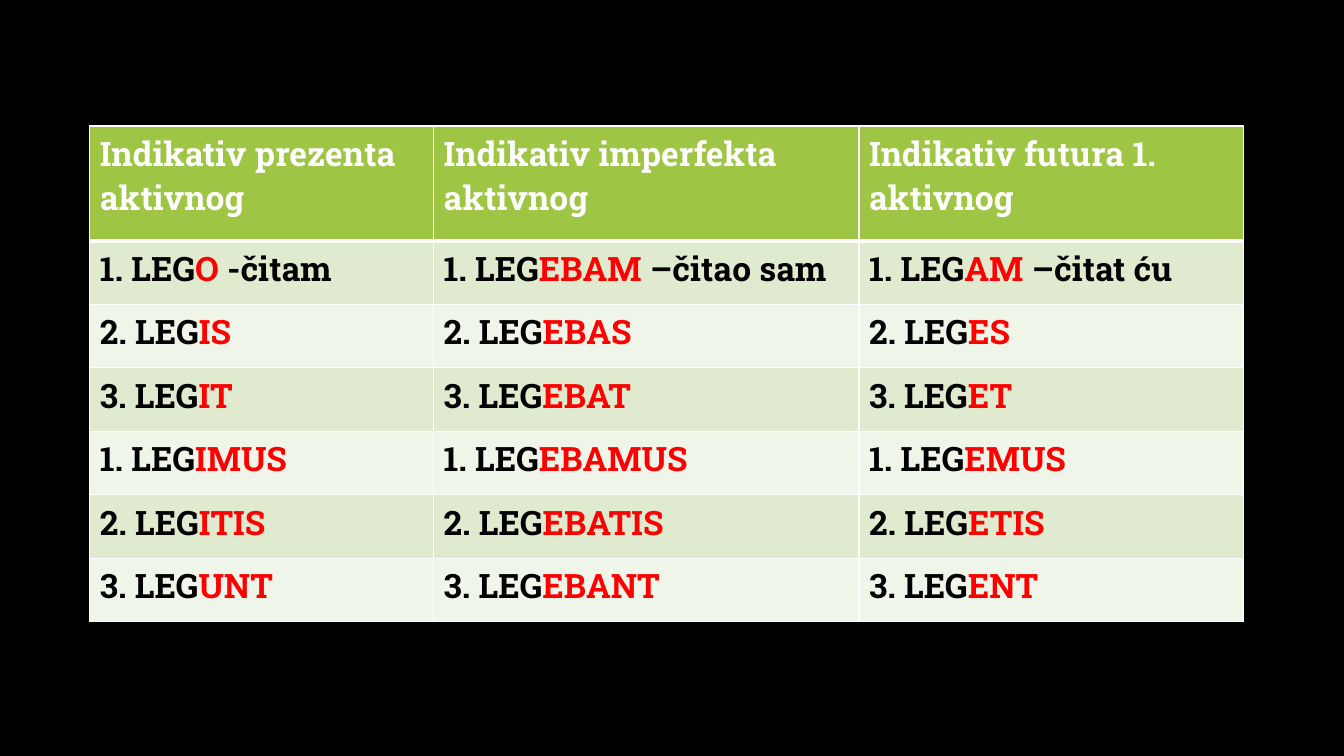
from lxml import etree
from pptx import Presentation
from pptx.dml.color import RGBColor
from pptx.oxml.ns import qn
from pptx.util import Inches, Pt

FONT = "Roboto Slab"
BLACK, WHITE, RED = "000000", "FFFFFF", "FF0000"
GREEN = "9EC544"
BANDS = ["DFEACF", "F0F5E9"]
WIDTHS = [3.41, 4.22, 3.81]
HEAD_H, ROW_H = 1.14, 0.63

# Each tense: heading, meaning of the first form, endings
TENSES = [
    ("Indikativ prezenta aktivnog", "-čitam",
     ["O", "IS", "IT", "IMUS", "ITIS", "UNT"]),
    ("Indikativ imperfekta aktivnog", "–čitao sam",
     ["EBAM", "EBAS", "EBAT", "EBAMUS", "EBATIS", "EBANT"]),
    ("Indikativ futura 1. aktivnog", "–čitat ću",
     ["AM", "ES", "ET", "EMUS", "ETIS", "ENT"]),
]


def color(code):
    return RGBColor.from_string(code)


def add_run(cell, text, code):
    run = cell.text_frame.paragraphs[0].add_run()
    run.text = text
    font = run.font
    font.name, font.size, font.bold = FONT, Pt(24), True
    font.color.rgb = color(code)


def add_edge(cell, side, width):
    props = cell._tc.get_or_add_tcPr()
    line = etree.SubElement(props, qn(f"a:{side}"), w=str(Pt(width)))
    fill = etree.SubElement(line, qn("a:solidFill"))
    etree.SubElement(fill, qn("a:srgbClr"), val=WHITE)


def style_cell(cell, code, top=1, bottom=1):
    # Borders come before the fill in the cell properties
    for side, width in (("lnL", 1), ("lnR", 1), ("lnT", top), ("lnB", bottom)):
        add_edge(cell, side, width)
    cell.fill.solid()
    cell.fill.fore_color.rgb = color(code)


def add_verbs(slide):
    count = len(TENSES[0][2])
    frame = slide.shapes.add_table(
        count + 1, len(TENSES), Inches(0.89), Inches(1.25),
        Inches(sum(WIDTHS)), Inches(HEAD_H + count * ROW_H))
    table = frame.table
    for col, width in zip(table.columns, WIDTHS):
        col.width = Inches(width)
    for i, row in enumerate(table.rows):
        row.height = Inches(ROW_H if i else HEAD_H)

    for c, (title, sense, ends) in enumerate(TENSES):
        # Heading
        head = table.cell(0, c)
        style_cell(head, GREEN, bottom=3)
        add_run(head, title, WHITE)
        # Three singular persons, then three plural ones
        for i, end in enumerate(ends):
            cell = table.cell(i + 1, c)
            style_cell(cell, BANDS[i % 2], top=1 if i else 3)
            add_run(cell, f"{i % 3 + 1}. LEG", BLACK)
            add_run(cell, end if i else end + " ", RED)
            if i == 0:
                add_run(cell, sense, BLACK)


def main():
    deck = Presentation()
    deck.slide_width, deck.slide_height = Inches(13.33), Inches(7.5)
    slide = deck.slides.add_slide(deck.slide_layouts[6])
    back = slide.background.fill
    back.solid()
    back.fore_color.rgb = color(BLACK)
    add_verbs(slide)
    deck.save("out.pptx")


if __name__ == "__main__":
    main()
